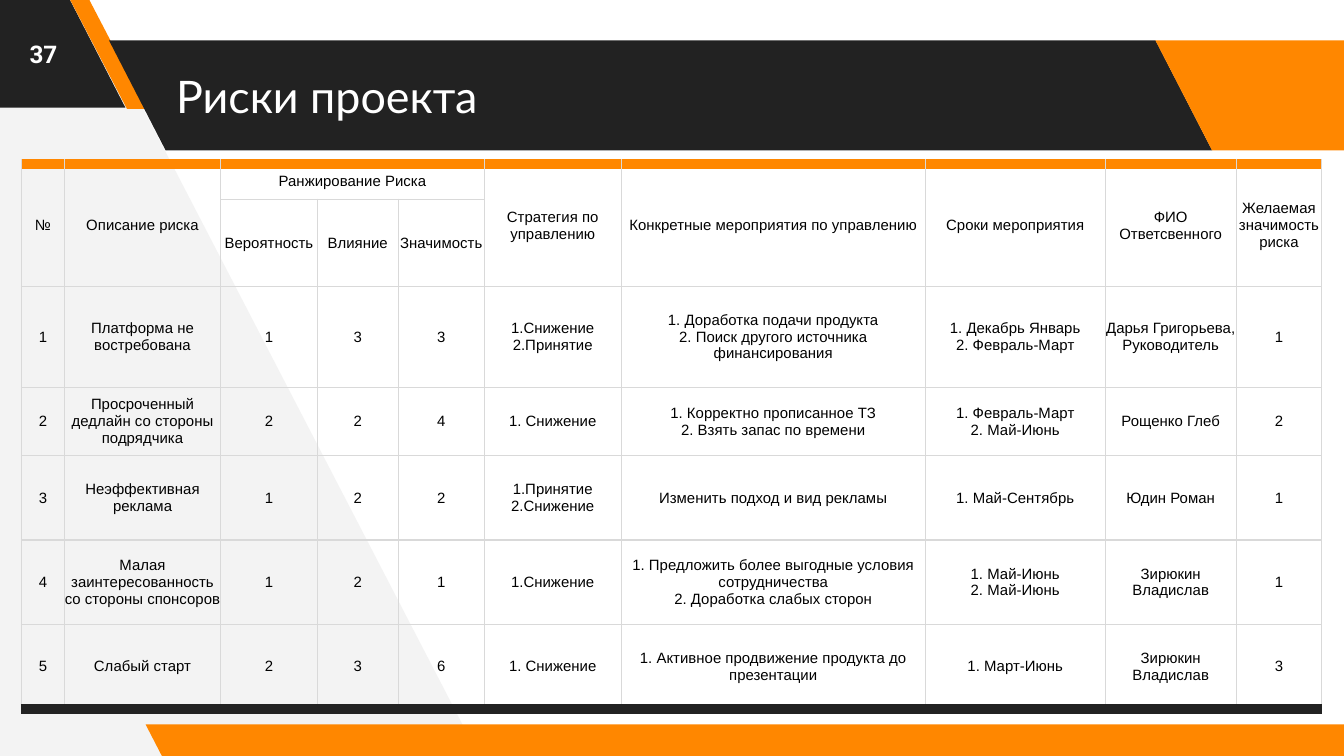
from collections import namedtuple

from lxml import etree
from pptx import Presentation
from pptx.dml.color import RGBColor
from pptx.enum.shapes import MSO_SHAPE
from pptx.enum.text import MSO_ANCHOR, PP_ALIGN
from pptx.oxml.ns import qn
from pptx.util import Pt

Box = namedtuple("Box", "left top width height")

PARALLELOGRAM = MSO_SHAPE.PARALLELOGRAM
MIDDLE = MSO_ANCHOR.MIDDLE
LEFT, CENTER = PP_ALIGN.LEFT, PP_ALIGN.CENTER

ORANGE, DARK, PALE, WHITE, BLACK, GRID = (
    "FF8700", "222222", "F3F3F3", "FFFFFF", "000000", "D9D9D9")

COLUMN_WIDTHS = [23, 83.8, 51.7, 43.4, 46.1, 73.4, 162.9, 96.4, 70.2, 45.8]
ROW_HEIGHTS = [18.7, 46.8, 54, 36.7, 45.2, 45.2, 45.2]
RANKING_COLUMNS = range(2, 5)

RISKS = [
    ["№", "Описание риска", "Ранжирование Риска", "", "",
     "Стратегия по управлению", "Конкретные мероприятия по управлению",
     "Сроки мероприятия", "ФИО Ответсвенного", "Желаемая значимость риска"],
    ["", "", "Вероятность", "Влияние", "Значимость", "", "", "", "", ""],
    ["1", "Платформа не востребована", "1", "3", "3",
     "1.Снижение\n2.Принятие",
     "1. Доработка подачи продукта\n2. Поиск другого источника финансирования",
     "1. Декабрь Январь\n2. Февраль-Март",
     "Дарья Григорьева, Руководитель", "1"],
    ["2", "Просроченный дедлайн со стороны подрядчика", "2", "2", "4",
     "1. Снижение",
     "1. Корректно прописанное ТЗ\n2. Взять запас по времени",
     "1. Февраль-Март\n2. Май-Июнь", "Рощенко Глеб", "2"],
    ["3", "Неэффективная реклама", "1", "2", "2",
     "1.Принятие\n2.Снижение", "Изменить подход и вид рекламы",
     "1. Май-Сентябрь", "Юдин Роман", "1"],
    ["4", "Малая заинтересованность со стороны спонсоров", "1", "2", "1",
     "1.Снижение",
     "1. Предложить более выгодные условия сотрудничества\n2. Доработка слабых сторон",
     "1. Май-Июнь\n2. Май-Июнь", "Зирюкин Владислав", "1"],
    ["5", "Слабый старт", "2", "3", "6", "1. Снижение",
     "1. Активное продвижение продукта до презентации",
     "1. Март-Июнь", "Зирюкин Владислав", "3"],
]


def color(value):
    """Turn a hex string into a colour."""
    return RGBColor.from_string(value)


def paint(shape, fill):
    """Give a shape a flat fill with no outline or shadow."""
    shape.shadow.inherit = False
    shape.fill.solid()
    shape.fill.fore_color.rgb = color(fill)
    shape.line.fill.background()


def write_text(frame, text, font="Arial", size=8, fill=BLACK, bold=False, align=CENTER):
    """Write each line of the text as a formatted paragraph."""
    frame.word_wrap = True
    for index, line in enumerate(text.split("\n")):
        para = frame.paragraphs[0] if index == 0 else frame.add_paragraph()
        para.alignment = align
        span = para.add_run()
        span.text = line
        span.font.name = font
        span.font.size = Pt(size)
        span.font.bold = bold
        span.font.color.rgb = color(fill)


def add_label(page, box, text, **text_format):
    """Place a vertically centred text box."""
    frame = page.shapes.add_textbox(*map(Pt, box)).text_frame
    frame.vertical_anchor = MIDDLE
    frame.margin_left = frame.margin_right = Pt(7.2)
    frame.margin_top = frame.margin_bottom = Pt(7.2)
    write_text(frame, text, **text_format)


def add_slant(page, box, fill, slant=0.515):
    """Place a parallelogram whose sides lean to the left."""
    shape = page.shapes.add_shape(PARALLELOGRAM, *map(Pt, box))
    shape.adjustments[0] = slant
    shape._element.spPr.find(qn("a:xfrm")).set("flipH", "1")
    paint(shape, fill)


def add_backdrop(page, box):
    """Place the pale wedge along the left side."""
    right, bottom = box.left + box.width, box.top + box.height
    builder = page.shapes.build_freeform(right, bottom - 3, scale=Pt(1))
    builder.add_line_segments(
        [(box.left + 49, box.top), (box.left, box.top), (box.left + 3, bottom)])
    paint(builder.convert_to_shape(), PALE)


def add_header(page, box, title, number):
    """Place the page number, the title band and their slanted accents."""
    left, top, width, height = box
    band_top, band_height = top + 21.6, 59
    add_slant(page, Box(left - 71.3, top - 1.4, 138.5, 59), DARK)
    add_slant(page, Box(left + 37.3, top - 0.7, 41, 59), ORANGE, 0.75)
    add_slant(page, Box(left + 58.4, band_top, 591, band_height), DARK)
    add_slant(page, Box(left + width - 101, band_top, 138.5, band_height), ORANGE)
    add_label(page, Box(left + 87.3, band_top, 529, band_height), title,
              font="Lato", size=24, fill=WHITE, align=LEFT)
    add_label(page, Box(left, top, 46.6, height - 23), number,
              font="Roboto", size=13, fill=WHITE, bold=True)


def add_footer(page, box):
    """Place the slanted strip at the foot of the page."""
    add_slant(page, box, ORANGE)


def add_borders(cell, top, bottom):
    """Draw the four cell borders, with the given top and bottom styles."""
    thin = (GRID, 0.75)
    sides = {"lnL": thin, "lnR": thin, "lnT": top or thin, "lnB": bottom or thin}
    properties = cell._tc.get_or_add_tcPr()
    for index, (side, (fill, width)) in enumerate(sides.items()):
        line = etree.Element(qn(f"a:{side}"), w=str(Pt(width)))
        solid = etree.SubElement(line, qn("a:solidFill"))
        etree.SubElement(solid, qn("a:srgbClr"), val=fill)
        properties.insert(index, line)


def add_risk_table(page, box, rows):
    """Place the risk table with its two-level header."""
    table = page.shapes.add_table(len(rows), len(rows[0]), *map(Pt, box)).table
    table.first_row = table.horz_banding = False
    for column, width in zip(table.columns, COLUMN_WIDTHS):
        column.width = Pt(width)
    for row, height in zip(table.rows, ROW_HEIGHTS):
        row.height = Pt(height)

    table.cell(0, RANKING_COLUMNS[0]).merge(table.cell(0, RANKING_COLUMNS[-1]))
    for index in range(len(rows[0])):
        if index not in RANKING_COLUMNS:
            table.cell(0, index).merge(table.cell(1, index))

    for row_index, texts in enumerate(rows):
        top = (ORANGE, 6) if row_index == 0 else None
        bottom = (DARK, 6) if row_index == len(rows) - 1 else None
        for column_index, text in enumerate(texts):
            cell = table.cell(row_index, column_index)
            cell.fill.background()
            cell.vertical_anchor = MIDDLE
            cell.margin_left = cell.margin_right = 0
            cell.margin_top = cell.margin_bottom = 0
            add_borders(cell, top, bottom)
            if text:
                write_text(cell.text_frame, text)


def main():
    """Build the risk slide and save the deck."""
    deck = Presentation()
    deck.slide_width, deck.slide_height = Pt(720), Pt(405)
    page = deck.slides.add_slide(deck.slide_layouts[6])
    add_backdrop(page, Box(-4, -3, 260.5, 410.5))
    add_header(page, Box(0, 0, 720, 80.6), "Риски проекта", "37")
    add_footer(page, Box(78, 388, 659, 18))
    add_risk_table(page, Box(11.5, 88, sum(COLUMN_WIDTHS), sum(ROW_HEIGHTS)), RISKS)
    deck.save("out.pptx")


if __name__ == "__main__":
    main()
